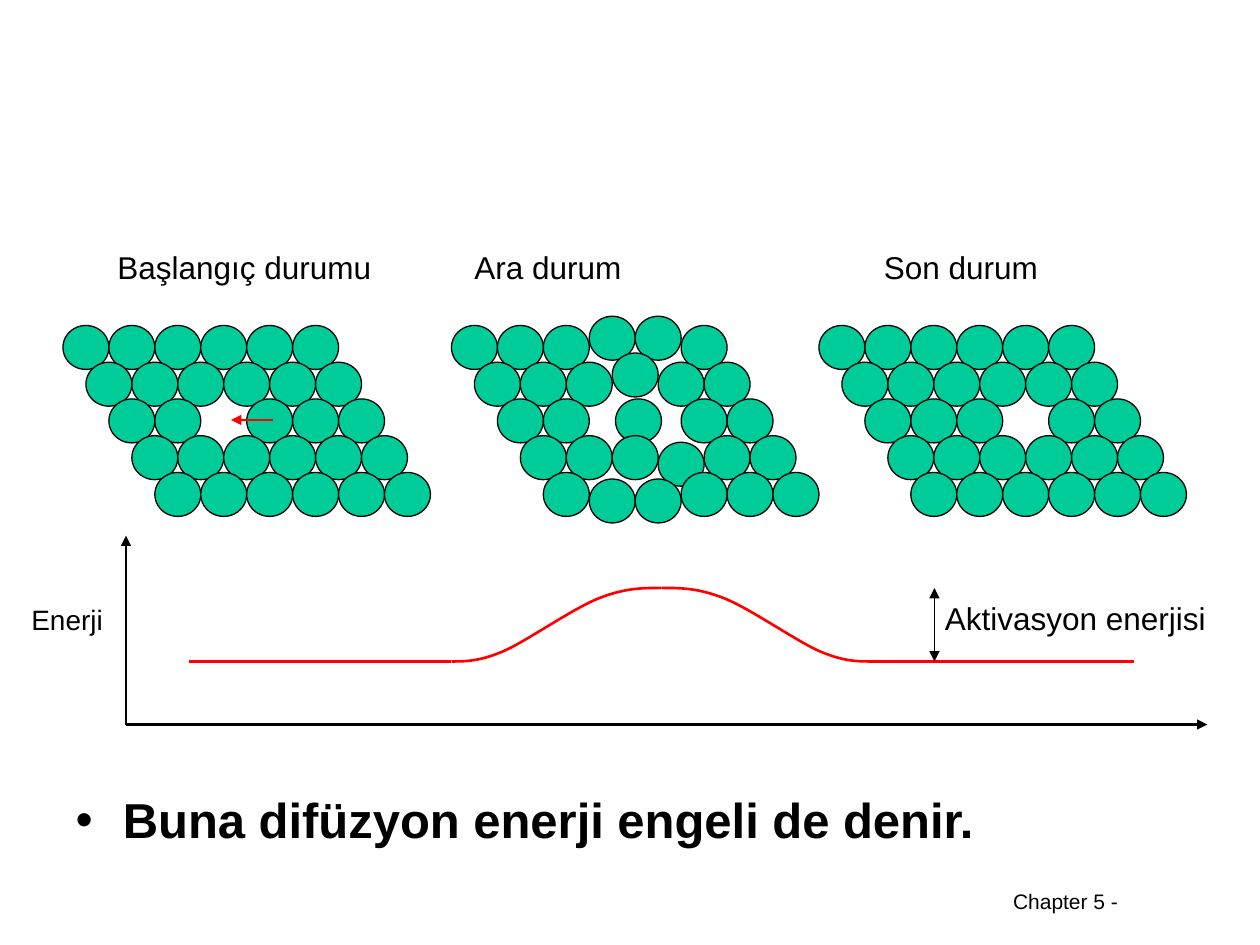
from dataclasses import dataclass, field

from lxml import etree
from pptx import Presentation
from pptx.dml.color import RGBColor
from pptx.enum.shapes import MSO_CONNECTOR, MSO_SHAPE
from pptx.enum.text import MSO_ANCHOR, MSO_AUTO_SIZE
from pptx.oxml.ns import qn
from pptx.util import Emu, Pt

ELLIPSE = MSO_SHAPE.OVAL
STRAIGHT = MSO_CONNECTOR.STRAIGHT
FIT_SHAPE = MSO_AUTO_SIZE.SHAPE_TO_FIT_TEXT
TOP = MSO_ANCHOR.TOP

PX = 914400 / 192  # 192 px to the inch
FONT = "Arial"
BLACK, RED, GREEN = "000000", "FF0000", "00CC99"

ROWS, COLS = 5, 6
ATOM_W, ATOM_H = 70, 67
ROW_STEP = 56
LATTICE_TOP = 496

BASE_Y, PEAK_Y = 1008, 896
PEAK_X = 1008
RISE = [(688, BASE_Y), (709, BASE_Y), (731, BASE_Y), (768, 992), (804, 976),
        (872, 928), (912, 912), (952, PEAK_Y), (979, PEAK_Y), (PEAK_X, PEAK_Y)]


@dataclass
class Lattice:
    left: int
    vacancy: tuple[int, int]
    shifts: dict[tuple[int, int], tuple[int, int]] = field(default_factory=dict)


@dataclass
class Label:
    text: str
    left: int
    top: int
    width: int
    height: int
    size: int


@dataclass
class Line:
    start: tuple[int, int]
    end: tuple[int, int]
    color: str
    width: float
    heads: tuple[str, ...] = ()


LATTICES = [
    Lattice(96, (2, 2)),
    Lattice(1248, (2, 3)),
    Lattice(688, (2, 3), {(0, 3): (0, -14), (0, 4): (0, -14), (1, 3): (0, -14),
                          (2, 2): (40, 0), (3, 3): (0, 10),
                          (4, 1): (0, 10), (4, 2): (0, 10)}),
]
LABELS = [
    Label("Başlangıç durumu", 160, 368, 426, 77, 18),
    Label("Son durum", 1328, 368, 273, 77, 18),
    Label("Ara durum", 704, 368, 263, 77, 18),
    Label("Aktivasyon enerjisi", 1421, 904, 436, 77, 18),
    Label("Chapter 5 -", 1525, 1344, 200, 58, 12),
]
ENERGY_LABEL = Label("Enerji", 29, 908, 148, 71, 16)
AXES = [
    Line((192, 1104), (192, 816), BLACK, 1.5, ("tailEnd",)),
    Line((192, 1104), (1840, 1104), BLACK, 1.5, ("tailEnd",)),
]
FLAT_ENERGY = [
    Line((688, BASE_Y), (288, BASE_Y), RED, 1.5),
    Line((1728, BASE_Y), (1328, BASE_Y), RED, 1.5),
]
ARROWS = [
    Line((1424, PEAK_Y), (1424, BASE_Y), BLACK, 0.75, ("headEnd", "tailEnd")),
    Line((416, 640), (352, 640), RED, 1, ("tailEnd",)),
]


def px(*lengths: int) -> list[Emu]:
    return [Emu(round(n * PX)) for n in lengths]


def rgb(color: str) -> RGBColor:
    return RGBColor.from_string(color)


def style_line(line, color: str, width: float) -> None:
    line.color.rgb = rgb(color)
    line.width = Pt(width)


def style_font(p, size: int, bold: bool = False) -> None:
    p.font.name = FONT
    p.font.size = Pt(size)
    p.font.bold = bold
    p.font.color.rgb = rgb(BLACK)


def draw_lattice(shapes, lattice: Lattice) -> None:
    """Stack close-packed rows, each half an atom to the right of the last."""
    atoms = shapes.add_group_shape().shapes
    for row in range(ROWS):
        for col in range(COLS):
            if (row, col) == lattice.vacancy:
                continue
            dx, dy = lattice.shifts.get((row, col), (0, 0))
            x = lattice.left + col * ATOM_W + row * ATOM_W // 2 + dx
            y = LATTICE_TOP + row * ROW_STEP + dy
            atom = atoms.add_shape(ELLIPSE, *px(x, y, ATOM_W, ATOM_H))
            atom.shadow.inherit = False
            atom.fill.solid()
            atom.fill.fore_color.rgb = rgb(GREEN)
            style_line(atom.line, BLACK, 0.75)


def draw_label(shapes, label: Label) -> None:
    box = shapes.add_textbox(*px(label.left, label.top, label.width, label.height))
    tf = box.text_frame
    tf.word_wrap = False
    tf.auto_size = FIT_SHAPE
    p = tf.paragraphs[0]
    p.text = label.text
    style_font(p, label.size)


def draw_line(shapes, line: Line) -> None:
    connector = shapes.add_connector(STRAIGHT, *px(*line.start, *line.end))
    style_line(connector.line, line.color, line.width)
    sp_pr = connector._element.spPr
    ln = sp_pr.find(qn("a:ln"))
    for head in line.heads:
        etree.SubElement(ln, qn(f"a:{head}"), type="triangle")
    etree.SubElement(sp_pr, qn("a:effectLst"))


def draw_curve(shapes, points: list[tuple[int, int]]) -> None:
    """Draw a start point followed by Bézier triples as one open curve."""
    builder = shapes.build_freeform(*points[0], scale=PX)
    builder.add_line_segments(points[1:], close=False)
    curve = builder.convert_to_shape()
    curve.shadow.inherit = False
    curve.fill.background()
    style_line(curve.line, RED, 1.5)
    path = next(curve._element.iter(qn("a:path")))
    segments = path.findall(qn("a:lnTo"))
    for i in range(0, len(segments), 3):
        bezier = etree.SubElement(path, qn("a:cubicBezTo"))
        for segment in segments[i:i + 3]:
            bezier.append(segment[0])
            path.remove(segment)


def main() -> None:
    prs = Presentation()
    prs.slide_width, prs.slide_height = px(1920, 1440)
    s = prs.slides.add_slide(prs.slide_layouts[1])
    title, body = s.placeholders
    title._element.getparent().remove(title._element)

    body.left, body.top, body.width, body.height = px(96, 1194, 1728, 134)
    tf = body.text_frame
    tf.vertical_anchor = TOP
    p = tf.paragraphs[0]
    p.text = "Buna difüzyon enerji engeli de denir."
    p.space_before = Pt(0)
    style_font(p, 28, bold=True)

    for lattice in LATTICES:
        draw_lattice(s.shapes, lattice)
    for label in LABELS:
        draw_label(s.shapes, label)

    axes = s.shapes.add_group_shape().shapes
    for line in AXES:
        draw_line(axes, line)
    draw_label(axes, ENERGY_LABEL)

    energy = s.shapes.add_group_shape().shapes
    draw_curve(energy, RISE)
    draw_curve(energy, [(2 * PEAK_X - x, y) for x, y in RISE])
    for line in FLAT_ENERGY:
        draw_line(energy, line)

    for line in ARROWS:
        draw_line(s.shapes, line)
    prs.save("out.pptx")


if __name__ == "__main__":
    main()
